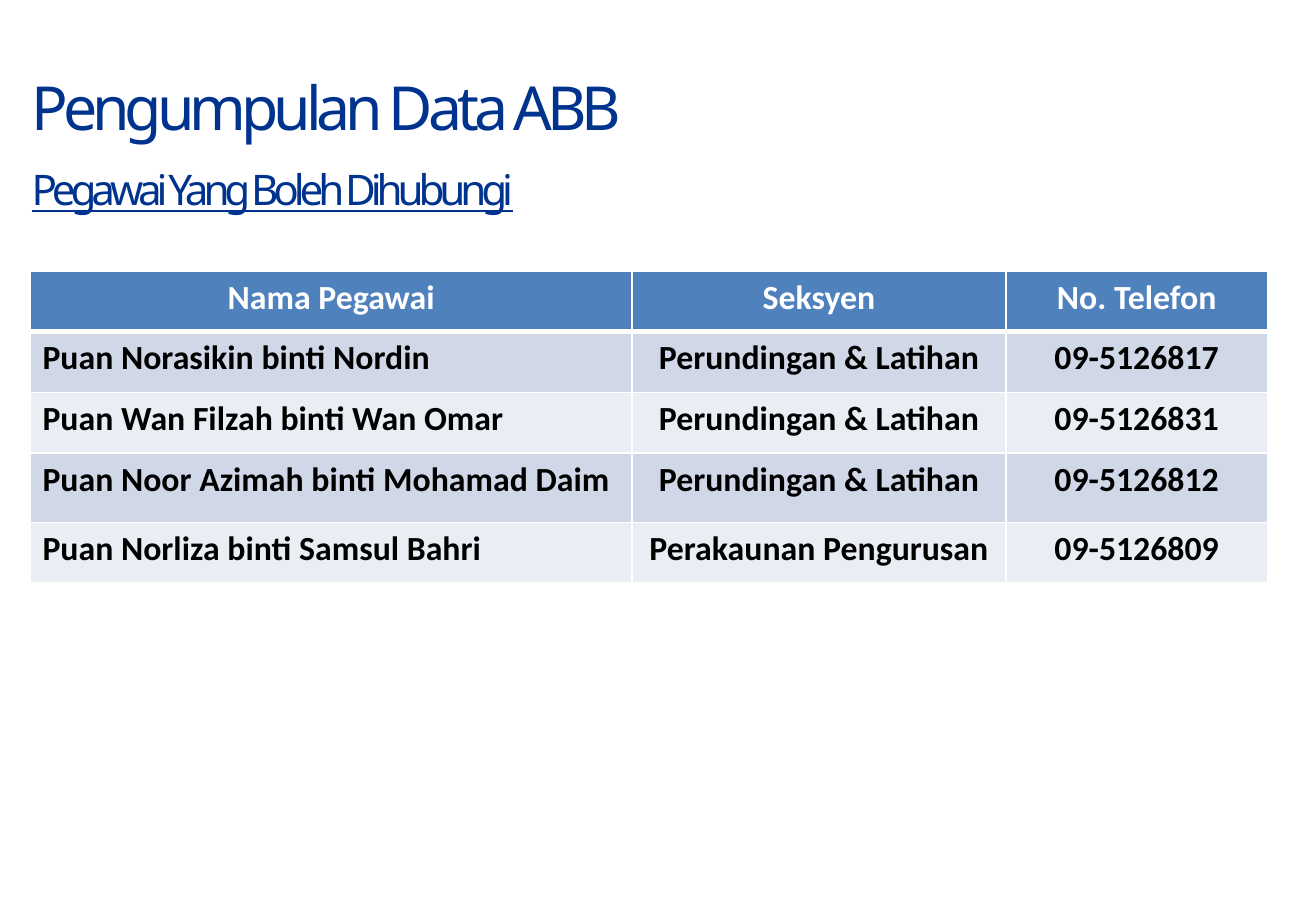
from lxml.etree import SubElement
from pptx import Presentation
from pptx.dml.color import RGBColor
from pptx.enum.text import MSO_ANCHOR as Anchor, MSO_AUTO_SIZE as AutoSize, PP_ALIGN as Align
from pptx.oxml.ns import qn
from pptx.util import Inches, Pt

COLOURS = {
    "title": "00338D",
    "header": "4F81BD",
    "band_dark": "D0D8E8",
    "band_light": "E9EDF4",
    "white": "FFFFFF",
    "black": "000000",
}
TITLE_LINES = [("Pengumpulan Data ABB", 36, False), ("Pegawai Yang Boleh Dihubungi", 25, True)]
OFFICERS = [
    ("Nama Pegawai", "Seksyen", "No. Telefon"),
    ("Puan Norasikin binti Nordin", "Perundingan & Latihan", "09-5126817"),
    ("Puan Wan Filzah binti Wan Omar", "Perundingan & Latihan", "09-5126831"),
    ("Puan Noor Azimah binti Mohamad Daim", "Perundingan & Latihan", "09-5126812"),
    ("Puan Norliza binti Samsul Bahri", "Perakaunan Pengurusan", "09-5126809"),
]


def grid(units):
    """Length of a number of quarter-inch grid columns or rows."""
    return Inches(0.25 * units)


def colour(name):
    return RGBColor.from_string(COLOURS[name])


class SlideBuilder:
    title_font = "Noto Sans"
    table_font = "Calibri"

    def __init__(self, slide):
        self.slide = slide

    def title(self, lines, left, top, width, height):
        shape = self.slide.shapes.title
        shape.left, shape.top = grid(left), grid(top)
        shape.width, shape.height = grid(width), grid(height)
        frame = shape.text_frame
        frame.auto_size = AutoSize.SHAPE_TO_FIT_TEXT
        frame.vertical_anchor = Anchor.TOP
        frame.margin_left = frame.margin_right = frame.margin_bottom = 0
        frame.margin_top = Inches(0.01)
        paragraph = frame.paragraphs[0]
        paragraph.alignment = Align.LEFT
        paragraph.line_spacing = Pt(42.2)
        paragraph.space_before = Pt(1)
        paragraph.font.name = self.title_font
        paragraph.font.color.rgb = colour("title")
        paragraph._p.get_or_add_pPr().set("marL", str(Inches(0.01)))
        for index, (text, size, underline) in enumerate(lines):
            if index:
                paragraph.add_line_break()
            run = paragraph.add_run()
            run.text = text
            run.font.size = Pt(size)
            run.font.underline = underline
            # Tight letter spacing, in hundredths of a point
            run._r.get_or_add_rPr().set("spc", "-300")

    def table(self, rows, left, top, widths, heights):
        frame = self.slide.shapes.add_table(
            len(rows), len(widths), grid(left), grid(top), grid(sum(widths)), grid(sum(heights)))
        table = frame.table
        for column, width in zip(table.columns, widths):
            column.width = grid(width)
        for row, height in zip(table.rows, heights):
            row.height = grid(height)
        for row_index, texts in enumerate(rows):
            for column_index, text in enumerate(texts):
                self.cell(table.cell(row_index, column_index), text, row_index, column_index)

    def cell(self, cell, text, row_index, column_index):
        is_header = row_index == 0
        band = "band_dark" if row_index % 2 else "band_light"
        cell.text = text
        paragraph = cell.text_frame.paragraphs[0]
        paragraph.alignment = Align.CENTER if is_header or column_index else Align.LEFT
        font = paragraph.font
        font.name, font.size, font.bold = self.table_font, Pt(20), True
        font.color.rgb = colour("white" if is_header else "black")
        self.borders(cell, top=3 if row_index == 1 else 1, bottom=3 if is_header else 1)
        cell.fill.solid()
        cell.fill.fore_color.rgb = colour("header" if is_header else band)

    def borders(self, cell, top, bottom):
        properties = cell._tc.get_or_add_tcPr()
        for side, width in (("L", 1), ("R", 1), ("T", top), ("B", bottom)):
            line = SubElement(properties, qn(f"a:ln{side}"), w=str(Pt(width)))
            fill = SubElement(line, qn("a:solidFill"))
            SubElement(fill, qn("a:srgbClr"), val=COLOURS["white"])


def main():
    presentation = Presentation()
    presentation.slide_width, presentation.slide_height = Inches(10.83), Inches(7.5)
    title_only = presentation.slide_layouts[5]
    builder = SlideBuilder(presentation.slides.add_slide(title_only))

    # Heading and underlined subheading
    builder.title(TITLE_LINES, left=1, top=2.32, width=41.68, height=4.76)

    # Contact officers
    builder.table(OFFICERS, left=1, top=8.92, widths=[19.8, 12.32, 8.6], heights=[2, 2, 2, 2.28, 2])

    presentation.save("out.pptx")


if __name__ == "__main__":
    main()
